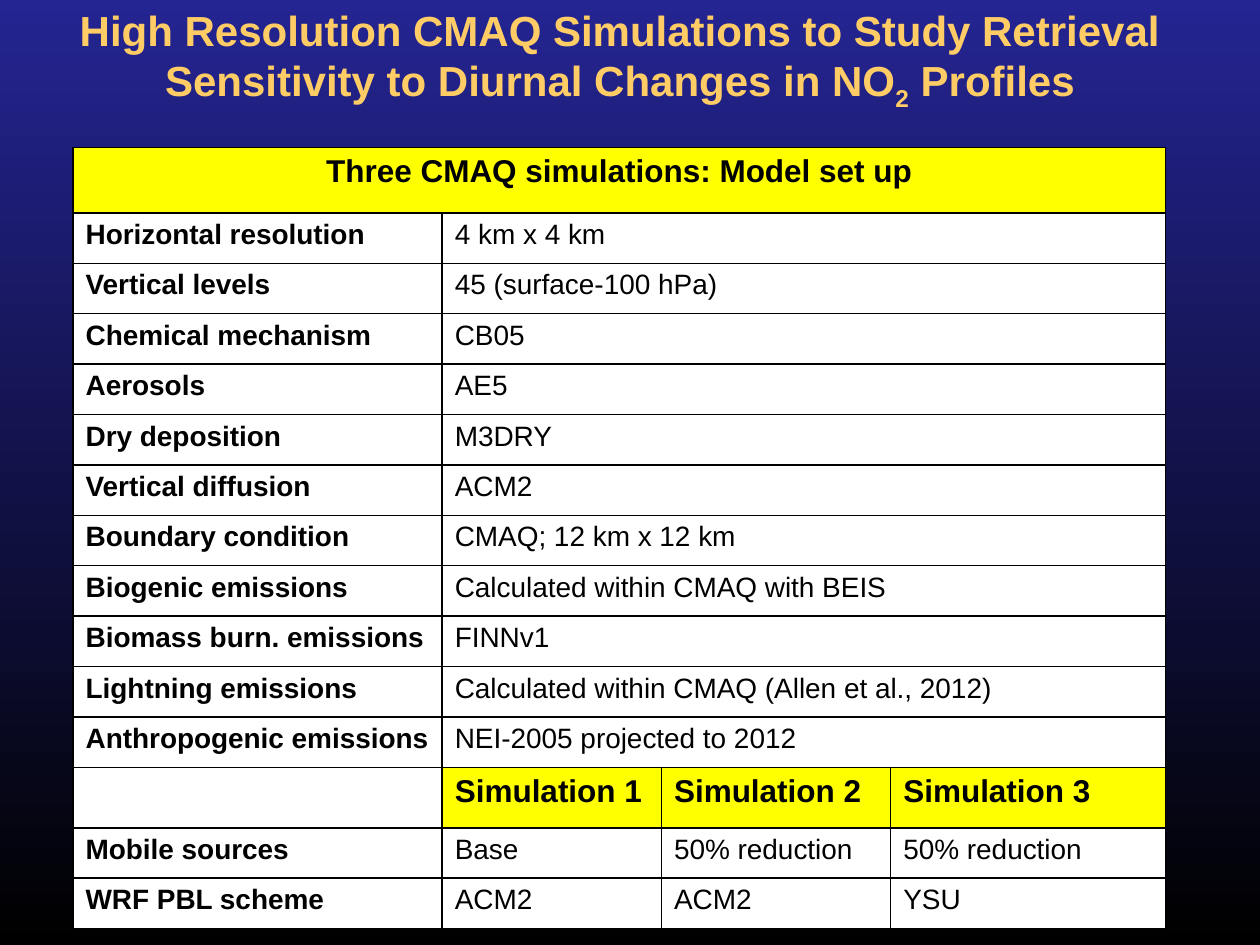
"""Build the slide on the set-up of three CMAQ simulations."""
from lxml import etree
from pptx import Presentation
from pptx.dml.color import RGBColor
from pptx.enum.text import MSO_ANCHOR, PP_ALIGN
from pptx.oxml.ns import qn
from pptx.util import Inches, Pt

CENTER, LEFT = PP_ALIGN.CENTER, PP_ALIGN.LEFT
MIDDLE = MSO_ANCHOR.MIDDLE
BLACK = RGBColor(0x00, 0x00, 0x00)
WHITE = RGBColor(0xFF, 0xFF, 0xFF)
NAVY = RGBColor(0x24, 0x24, 0x92)
YELLOW = RGBColor(0xFF, 0xFF, 0x00)
GOLD = RGBColor(0xFF, 0xCC, 0x66)

TITLE = [
    ("High Resolution CMAQ Simulations to Study Retrieval "
     "Sensitivity to Diurnal Changes in NO", None),
    ("2", "-25000"),
    (" Profiles", None),
]
ROWS = [
    ["Three CMAQ simulations: Model set up"],
    ["Horizontal resolution", "4 km x 4 km"],
    ["Vertical levels", "45 (surface-100 hPa)"],
    ["Chemical mechanism", "CB05"],
    ["Aerosols", "AE5"],
    ["Dry deposition", "M3DRY"],
    ["Vertical diffusion", "ACM2"],
    ["Boundary condition", "CMAQ; 12 km x 12 km"],
    ["Biogenic emissions", "Calculated within CMAQ with BEIS"],
    ["Biomass burn. emissions", "FINNv1"],
    ["Lightning emissions", "Calculated within CMAQ (Allen et al., 2012)"],
    ["Anthropogenic emissions", "NEI-2005 projected to 2012"],
    ["", "Simulation 1", "Simulation 2", "Simulation 3"],
    ["Mobile sources", "Base", "50% reduction", "50% reduction"],
    ["WRF PBL scheme", "ACM2", "ACM2", "YSU"],
]
COL_WIDTHS = [2.93, 1.74, 1.82, 2.18]
HEADER_HEIGHTS = {0: 0.52, 12: 0.48}
ROW_HEIGHT = 0.4


def add_text(p, text, size=16, bold=False, color=BLACK, align=LEFT, baseline=None):
    p.alignment = align
    r = p.add_run()
    r.text = text
    r.font.name, r.font.size = "Arial", Pt(size)
    r.font.bold, r.font.color.rgb = bold, color
    if baseline:
        r.font._element.set("baseline", baseline)


def style_cell(cell, fill):
    cell.fill.solid()
    cell.fill.fore_color.rgb = fill
    tc_pr = cell._tc.get_or_add_tcPr()
    for i, side in enumerate(("lnL", "lnR", "lnT", "lnB")):
        ln = etree.Element(qn(f"a:{side}"), w=str(Pt(1)))
        solid = etree.SubElement(ln, qn("a:solidFill"))
        etree.SubElement(solid, qn("a:srgbClr"), val=str(BLACK))
        tc_pr.insert(i, ln)


def add_title(slide):
    s = slide.shapes.add_textbox(Inches(0.17), 0, Inches(9.5), Inches(0.92))
    tf = s.text_frame
    tf.word_wrap, tf.vertical_anchor = True, MIDDLE
    for text, baseline in TITLE:
        add_text(tf.paragraphs[0], text, size=24, bold=True, color=GOLD,
                 align=CENTER, baseline=baseline)


def add_setup_table(slide):
    heights = [HEADER_HEIGHTS.get(i, ROW_HEIGHT) for i in range(len(ROWS))]
    n_cols = len(COL_WIDTHS)
    table = slide.shapes.add_table(
        len(ROWS), n_cols, Inches(0.58), Inches(1.17),
        Inches(sum(COL_WIDTHS)), Inches(sum(heights))).table
    table.first_row = table.horz_banding = False
    for col, width in zip(table.columns, COL_WIDTHS):
        col.width = Inches(width)
    for i, (row, height) in enumerate(zip(ROWS, heights)):
        table.rows[i].height = Inches(height)
        header = i in HEADER_HEIGHTS
        last = len(row) - 1
        for j in range(n_cols):
            text = row[j] if j <= last else ""
            filled = header and row[min(j, last)]
            cell = table.cell(i, j)
            style_cell(cell, YELLOW if filled else WHITE)
            if text:
                add_text(cell.text_frame.paragraphs[0], text,
                         size=18 if header else 16, bold=header or j == 0,
                         align=LEFT if last else CENTER)
        if last < n_cols - 1:
            table.cell(i, last).merge(table.cell(i, n_cols - 1))


def main():
    prs = Presentation()
    prs.slide_width, prs.slide_height = Inches(10), Inches(7.5)
    slide = prs.slides.add_slide(prs.slide_layouts[6])
    fill = slide.background.fill
    fill.gradient()
    fill.gradient_angle = 90
    for stop, color in zip(fill.gradient_stops, (BLACK, NAVY)):
        stop.color.rgb = color
    add_setup_table(slide)
    add_title(slide)
    prs.save("out.pptx")


if __name__ == "__main__":
    main()
